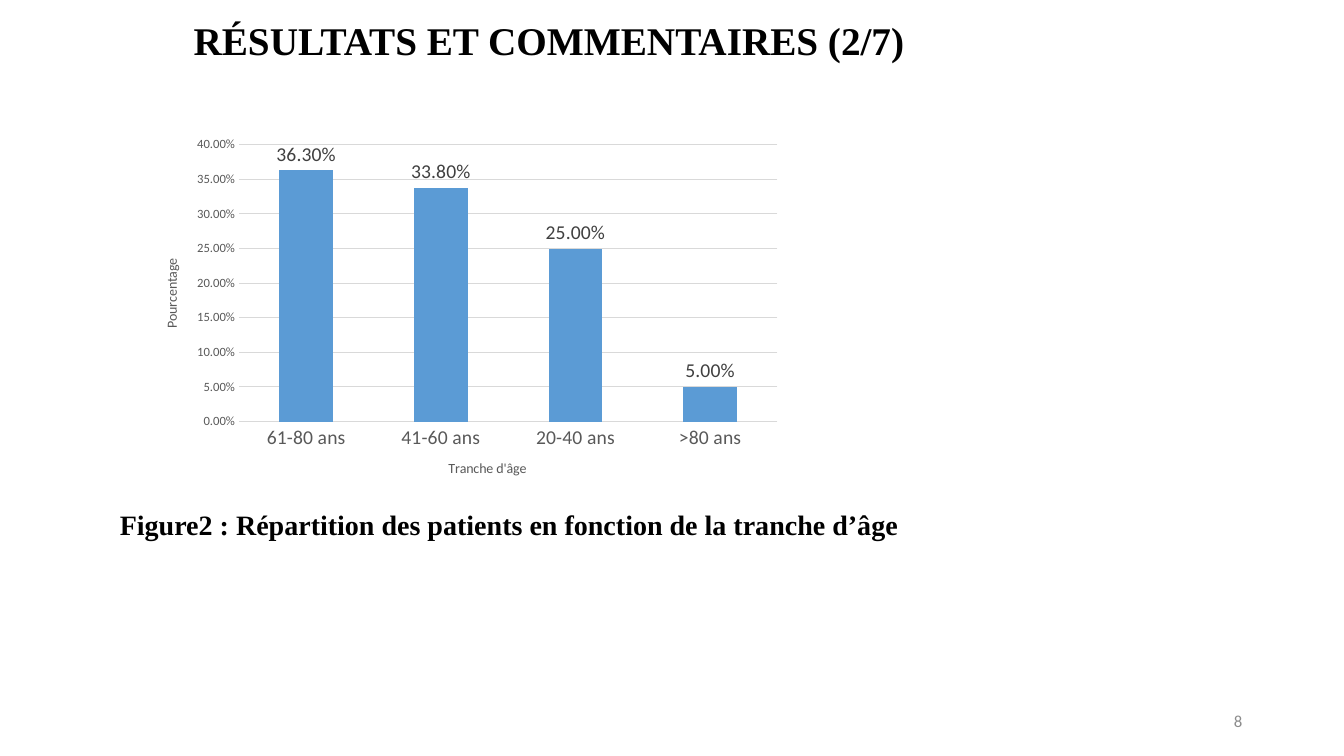
"""Build the results slide on the distribution of patients by age group."""
from dataclasses import dataclass

from pptx import Presentation
from pptx.chart.axis import CategoryAxis, ValueAxis
from pptx.chart.data import CategoryChartData
from pptx.dml.color import RGBColor
from pptx.enum.chart import XL_CHART_TYPE as ChartType
from pptx.enum.chart import XL_LABEL_POSITION as LabelPosition
from pptx.enum.chart import XL_TICK_MARK as TickMark
from pptx.enum.text import MSO_ANCHOR as Anchor
from pptx.enum.text import PP_ALIGN as Align
from pptx.shapes.autoshape import Shape
from pptx.slide import Slide
from pptx.text.text import Font
from pptx.util import Inches, Pt

BLACK = RGBColor(0x00, 0x00, 0x00)
DARK_GREY = RGBColor(0x40, 0x40, 0x40)
AXIS_GREY = RGBColor(0x59, 0x59, 0x59)
NUMBER_GREY = RGBColor(0x8C, 0x8C, 0x8C)
GRID_GREY = RGBColor(0xD9, 0xD9, 0xD9)
BAR_BLUE = RGBColor(0x5B, 0x9B, 0xD5)
SERIF = "Times New Roman"
SANS = "Calibri"
PERCENT = "0.00%"
AGE_SHARES = {"61-80 ans": 0.363, "41-60 ans": 0.338, "20-40 ans": 0.25, ">80 ans": 0.05}


@dataclass(frozen=True)
class TextItem:
    """Wording, place and look of one line of text."""

    wording: str
    left: float
    top: float
    width: float
    height: float
    size: float
    face: str = SERIF
    color: RGBColor = BLACK
    bold: bool = True
    align: Align = Align.LEFT
    anchor: Anchor = Anchor.TOP


HEADING = TextItem("RÉSULTATS ET COMMENTAIRES (2/7)", 1.82, 0.11, 7.39, 0.57, 28)
CAPTION = TextItem(
    "Figure2 : Répartition des patients en fonction de la tranche d’âge",
    1.09, 4.99, 8, 0.45, 20,
)
PAGE_NUMBER = TextItem(
    "8", 9.42, 6.95, 3, 0.4, 12, SANS, NUMBER_GREY, False, Align.RIGHT, Anchor.MIDDLE
)


def style_font(font: Font, size: float, color: RGBColor, face: str = SANS, bold: bool = False) -> None:
    """Apply size, colour, typeface and weight to a font."""
    font.size = Pt(size)
    font.color.rgb = color
    font.name = face
    font.bold = bold


def fill_text(holder: Shape, item: TextItem) -> None:
    """Place a text holder and write its item into it."""
    holder.left, holder.top = Inches(item.left), Inches(item.top)
    holder.width, holder.height = Inches(item.width), Inches(item.height)
    frame = holder.text_frame
    frame.text = item.wording
    frame.word_wrap = True
    frame.vertical_anchor = item.anchor
    paragraph = frame.paragraphs[0]
    paragraph.alignment = item.align
    style_font(paragraph.runs[0].font, item.size, item.color, item.face, item.bold)


def style_axis(axis: CategoryAxis | ValueAxis, title: str, size: float) -> None:
    """Give an axis its title and label size, without line or ticks."""
    axis.major_tick_mark = axis.minor_tick_mark = TickMark.NONE
    axis.format.line.fill.background()
    style_font(axis.tick_labels.font, size, AXIS_GREY)
    title_frame = axis.axis_title.text_frame
    title_frame.text = title
    style_font(title_frame.paragraphs[0].runs[0].font, 10, AXIS_GREY)


def add_age_chart(slide: Slide) -> None:
    """Draw the column chart of patient shares by age group."""
    age_data = CategoryChartData(number_format=PERCENT)
    age_data.categories = list(AGE_SHARES)
    age_data.add_series("Series 1", list(AGE_SHARES.values()))
    chart = slide.shapes.add_chart(
        ChartType.COLUMN_CLUSTERED,
        Inches(1.41), Inches(1.29), Inches(6.43), Inches(3.65), age_data,
    ).chart
    chart.has_title = False
    chart.has_legend = False
    style_font(chart.font, 10, BLACK)

    style_axis(chart.category_axis, "Tranche d'âge", 14)
    shares_axis = chart.value_axis
    style_axis(shares_axis, "Pourcentage", 9)
    shares_axis.minimum_scale, shares_axis.maximum_scale = 0, 0.4
    shares_axis.major_unit = 0.05
    shares_axis.tick_labels.number_format = PERCENT
    shares_axis.tick_labels.number_format_is_linked = False
    gridline = shares_axis.major_gridlines.format.line
    gridline.color.rgb = GRID_GREY
    gridline.width = Pt(0.75)

    columns = chart.plots[0]
    columns.gap_width = 150
    columns.vary_by_categories = False
    shares = columns.series[0]
    shares.format.fill.solid()
    shares.format.fill.fore_color.rgb = BAR_BLUE
    share_labels = shares.data_labels
    share_labels.show_value = True
    share_labels.position = LabelPosition.OUTSIDE_END
    share_labels.number_format = PERCENT
    share_labels.number_format_is_linked = False
    style_font(share_labels.font, 14, DARK_GREY)


def main() -> None:
    """Create the slide and save it."""
    deck = Presentation()
    deck.slide_width, deck.slide_height = Inches(13.33), Inches(7.5)
    slide = deck.slides.add_slide(deck.slide_layouts[5])
    add_age_chart(slide)
    fill_text(slide.shapes.title, HEADING)
    for item in (CAPTION, PAGE_NUMBER):
        fill_text(slide.shapes.add_textbox(0, 0, 0, 0), item)
    deck.save("out.pptx")


if __name__ == "__main__":
    main()
